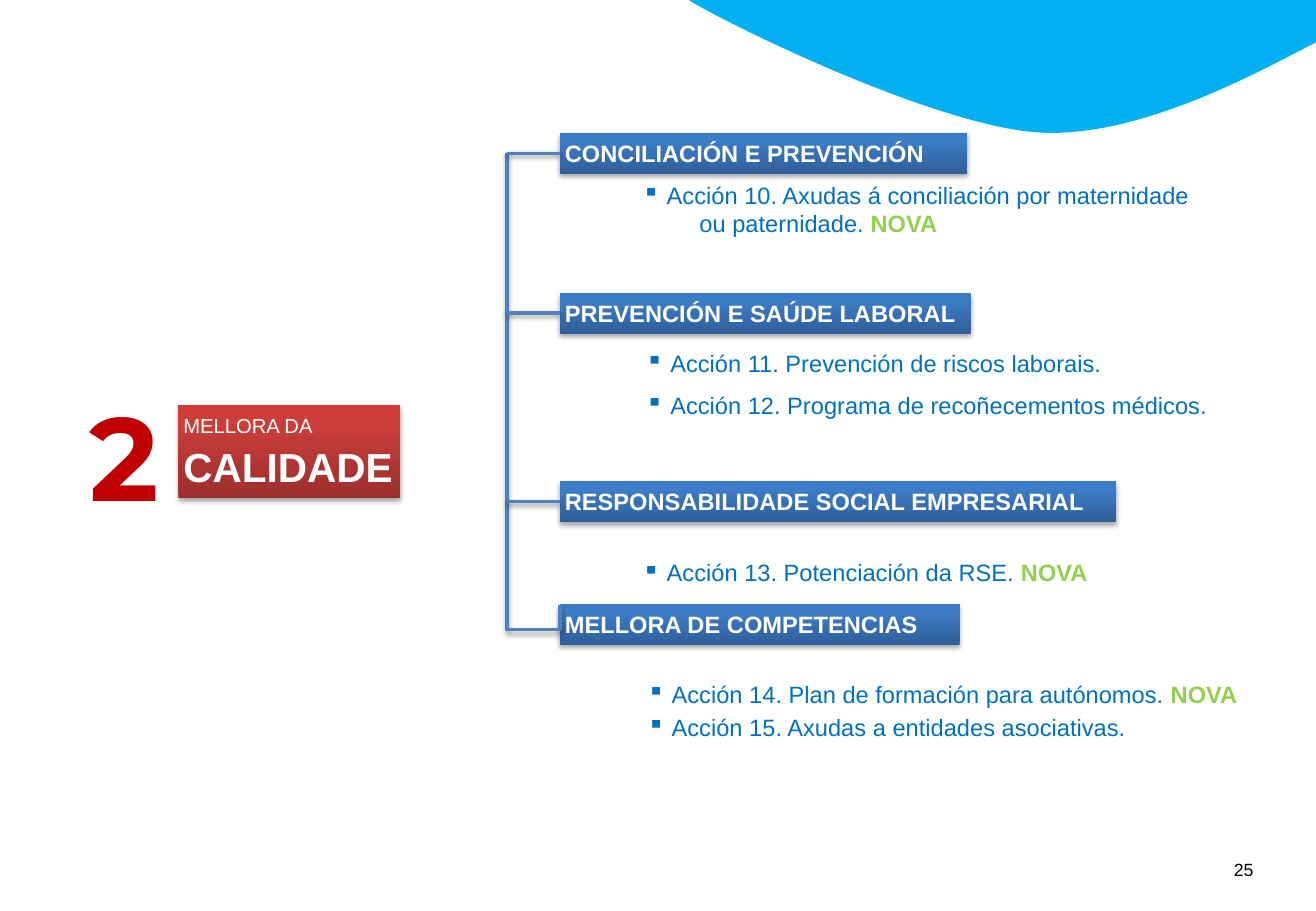
from copy import deepcopy
from dataclasses import dataclass

from lxml import etree
from pptx import Presentation
from pptx.dml.color import RGBColor
from pptx.enum.shapes import MSO_CONNECTOR, MSO_SHAPE
from pptx.enum.text import MSO_ANCHOR, PP_ALIGN
from pptx.oxml.ns import qn
from pptx.util import Pt

RECTANGLE = MSO_SHAPE.RECTANGLE
STRAIGHT, ELBOW = MSO_CONNECTOR.STRAIGHT, MSO_CONNECTOR.ELBOW
TOP, LEFT = MSO_ANCHOR.TOP, PP_ALIGN.LEFT
LEFT_SIDE = 1


@dataclass(frozen=True)
class Theme:
    wave: str = "00B0F0"
    action: str = "0070C0"
    new: str = "92D050"
    number: str = "C00000"
    branch: str = "4F81BD"
    page_number: str = "000000"
    label: str = "FFFFFF"
    shadow: str = "000000"
    blue: tuple = ((0, "2F5F99"), (0.8, "3D7CC7"), (1, "3A7CCB"))
    red: tuple = ((0, "9C2F2D"), (0.8, "CB3E3A"), (1, "CE3B37"))
    font: str = "Arial"
    display: str = "Montserrat"
    body: float = 14
    small: float = 12
    large: float = 24
    huge: float = 70
    footer: float = 10.5


@dataclass
class Line:
    runs: list
    bullet: bool = False
    indent: float = 0
    spacing: float = 1


def apply(target, values):
    for name, value in values.items():
        setattr(target, name, value)


def bezier(start, control1, control2, end, steps=40):
    for step in range(1, steps + 1):
        t = step / steps
        weights = ((1 - t) ** 3, 3 * t * (1 - t) ** 2, 3 * t * t * (1 - t), t ** 3)
        yield tuple(
            Pt(sum(w * v for w, v in zip(weights, axis)))
            for axis in zip(start, control1, control2, end)
        )


class Deck:
    def __init__(self, theme, width, height):
        self.theme = theme
        self.presentation = Presentation()
        apply(self.presentation, {"slide_width": Pt(width), "slide_height": Pt(height)})
        self.slide = self.presentation.slides.add_slide(self.presentation.slide_layouts[6])
        self.shapes = self.slide.shapes

    def styled(self, text, color, size, bold=False, font=None):
        values = {"size": Pt(size), "bold": bold, "name": font or self.theme.font}
        return text, RGBColor.from_string(color), values

    def fill_frame(self, frame, lines, inset=7.2, wrap=True):
        apply(frame, {
            "word_wrap": wrap, "vertical_anchor": TOP,
            "margin_left": Pt(inset), "margin_right": Pt(inset),
            "margin_top": Pt(3.6), "margin_bottom": Pt(3.6),
        })
        for index, line in enumerate(lines):
            paragraph = frame.add_paragraph() if index else frame.paragraphs[0]
            properties = paragraph._p.get_or_add_pPr()
            properties.set("marL", str(Pt(line.indent)))
            properties.set("indent", str(-Pt(line.indent) if line.bullet else 0))
            if line.bullet:
                etree.SubElement(properties, qn("a:buChar"), char="▪")
            apply(paragraph, {"alignment": LEFT, "line_spacing": line.spacing})
            for text, color, values in line.runs:
                run = paragraph.add_run()
                run.text = text
                apply(run.font, values)
                run.font.color.rgb = color

    def shade(self, shape, opacity, distance):
        effects = shape.element.spPr.find(qn("a:effectLst"))
        if effects is None:
            effects = etree.SubElement(shape.element.spPr, qn("a:effectLst"))
        shadow = etree.SubElement(
            effects, qn("a:outerShdw"), blurRad=str(Pt(3.1)), dist=str(Pt(distance)),
            dir="5400000", rotWithShape="0")
        color = etree.SubElement(shadow, qn("a:srgbClr"), val=self.theme.shadow)
        etree.SubElement(color, qn("a:alpha"), val=str(opacity * 1000))

    def text(self, box, lines, wrap=True):
        frame = self.shapes.add_textbox(*map(Pt, box)).text_frame
        self.fill_frame(frame, lines, wrap=wrap)

    def banner(self, box, gradient, lines):
        banner = self.shapes.add_shape(RECTANGLE, *map(Pt, box))
        banner.shadow.inherit = False
        banner.line.fill.background()
        banner.fill.gradient()
        banner.fill.gradient_angle = 90
        stops = banner.element.spPr.find(".//" + qn("a:gsLst"))
        stops.append(deepcopy(stops[0]))
        for stop, (position, color) in zip(banner.fill.gradient_stops, gradient):
            stop.position = position
            stop.color.rgb = RGBColor.from_string(color)
        self.shade(banner, 35, 1.8)
        self.fill_frame(banner.text_frame, lines, inset=2.9)
        return banner

    def connector(self, kind, start, end):
        connector = self.shapes.add_connector(kind, *map(Pt, start + end))
        connector.line.width = Pt(2)
        connector.line.color.rgb = RGBColor.from_string(self.theme.branch)
        self.shade(connector, 38, 1.6)
        return connector

    def branch(self, trunk_x, banner):
        middle = (banner.top + banner.height / 2) / Pt(1)
        branch = self.connector(STRAIGHT, (trunk_x, middle), (banner.left / Pt(1), middle))
        branch.end_connect(banner, LEFT_SIDE)

    def trunk(self, start, end, overshoot):
        (x1, y1), (x2, y2) = start, end
        length, depth = y2 - y1, x2 - x1
        left, top = (x1 + x2 - length) / 2, (y1 + y2 - depth) / 2
        trunk = self.connector(ELBOW, (left, top), (left + length, top + depth))
        transform = trunk.element.spPr.find(qn("a:xfrm"))
        transform.set("rot", "16200000")
        transform.set("flipH", "1")
        geometry = trunk.element.spPr.find(qn("a:prstGeom"))
        guides = geometry.find(qn("a:avLst"))
        if guides is None:
            guides = etree.SubElement(geometry, qn("a:avLst"))
        ratio = round((length + overshoot) / length * 100000)
        etree.SubElement(guides, qn("a:gd"), name="adj1", fmla=f"val {ratio}")

    def wave(self, start, curves, corner):
        builder = self.shapes.build_freeform(Pt(start[0]), Pt(start[1]), scale=1.0)
        for curve in curves:
            builder.add_line_segments(list(bezier(start, *curve)), close=False)
            start = curve[-1]
        builder.add_line_segments([tuple(map(Pt, corner))], close=True)
        wave = builder.convert_to_shape()
        wave.shadow.inherit = False
        wave.fill.solid()
        wave.fill.fore_color.rgb = RGBColor.from_string(self.theme.wave)
        wave.line.fill.background()


def main():
    theme = Theme()
    deck = Deck(theme, 780, 540)

    def action(text, new="", spacing=1.0, bullet=True, indent=14.4):
        runs = [deck.styled(text, theme.action, theme.body)]
        if new:
            runs.append(deck.styled(new, theme.new, theme.body, bold=True))
        return Line(runs, bullet, indent, spacing)

    deck.wave((408.2, 0), [
        ((429.8, 13.7), (553, 74.2), (614.9, 78.5)),
        ((676.8, 82.8), (752.4, 38.9), (780, 25.2)),
    ], (780, 0))
    deck.text((724.3, 505.4, 33.8, 20.2),
              [Line([deck.styled("25", theme.page_number, theme.footer)])])

    topics = [
        ("CONCILIACIÓN E PREVENCIÓN", 78.7, 241.2),
        ("PREVENCIÓN E SAÚDE LABORAL", 173.5, 243.4),
        ("RESPONSABILIDADE SOCIAL EMPRESARIAL", 285.1, 329.8),
        ("MELLORA DE COMPETENCIAS", 357.8, 236.9),
    ]
    banners = [
        deck.banner((331.9, top, width, 24.3), theme.blue,
                    [Line([deck.styled(title, theme.label, theme.body, bold=True)])])
        for title, top, width in topics
    ]
    trunk_x = 300.4
    deck.trunk((trunk_x, 90.8), (331.9, 358.6), 14.6)
    for banner in banners[:3]:
        deck.branch(trunk_x, banner)

    actions = [
        (373.7, 103.7, 58.3, [
            action("Acción 10. Axudas á conciliación por maternidade"),
            action("ou paternidade.", " NOVA", bullet=False, indent=33.8)]),
        (375.8, 203, 49.7, [
            action("Acción 11. Prevención de riscos laborais."),
            action("Acción 12. Programa de recoñecementos médicos.", spacing=1.5)]),
        (373.7, 319, 32.4, [action("Acción 13. Potenciación da RSE.", " NOVA", 1.5)]),
        (376.6, 391, 32.4, [
            action("Acción 14. Plan de formación para autónomos.", " NOVA", 1.5)]),
        (376.6, 410.4, 32.4, [action("Acción 15. Axudas a entidades asociativas.", spacing=1.5)]),
    ]
    for left, top, height, lines in actions:
        deck.text((left, top, 394.6, height), lines)

    deck.banner((105.8, 239.8, 131.4, 55.4), theme.red, [
        Line([deck.styled("MELLORA DA", theme.label, theme.small)], spacing=1.1),
        Line([deck.styled("CALIDADE", theme.label, theme.large, bold=True)], spacing=1.1),
    ])
    deck.text((46.1, 223.9, 61.9, 92.2), [
        Line([deck.styled("2", theme.number, theme.huge, True, theme.display)])], wrap=False)

    deck.presentation.save("out.pptx")


if __name__ == "__main__":
    main()
